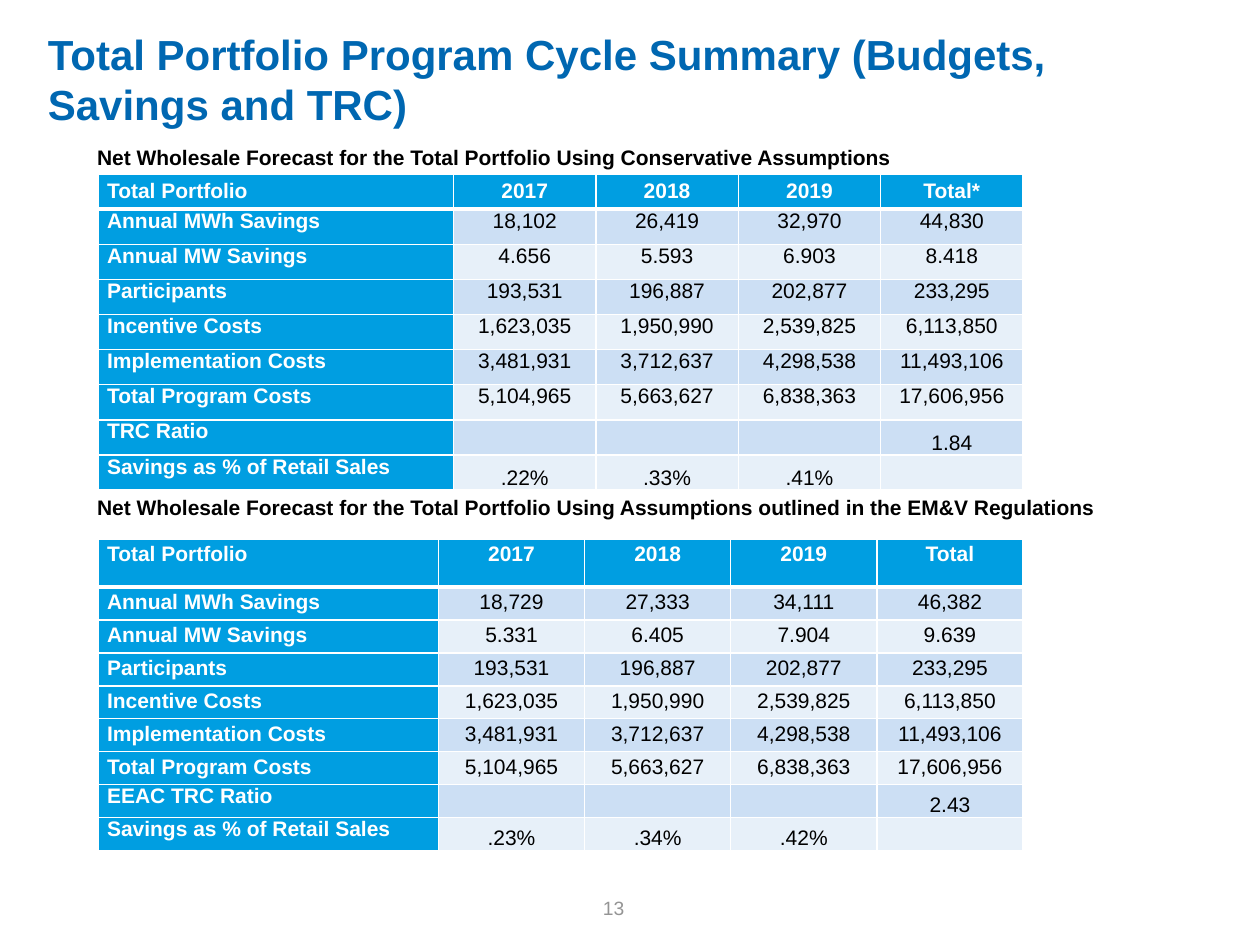
from dataclasses import dataclass
from lxml.etree import SubElement as Sub
from pptx import Presentation
from pptx.dml.color import RGBColor as Rgb
from pptx.enum.text import MSO_ANCHOR as Anchor, MSO_AUTO_SIZE as Fit, PP_ALIGN as Align
from pptx.oxml.ns import qn
from pptx.util import Inches, Pt


@dataclass(frozen=True)
class Theme:
    font: str = "Arial"
    head: str = "0067B1"
    fill: str = "009EE1"
    odd: str = "CCDFF4"
    even: str = "E7F0F9"
    white: str = "FFFFFF"
    black: str = "000000"
    gray: str = "949494"
    big: int = 24
    text: int = 12
    small: int = 11


class Page:
    def __init__(self, deck, theme):
        self.theme = theme
        self.slide = deck.slides.add_slide(deck.slide_layouts[1])

    def style(self, para, size, color, bold=False, align=Align.LEFT):
        para.alignment = align
        for run in para.runs:
            font = run.font
            font.name, font.size, font.bold = self.theme.font, Pt(size), bold
            font.color.rgb = Rgb.from_string(color)

    def place(self, shape, box, anchor):
        shape.left, shape.top, shape.width, shape.height = map(Inches, box)
        frame = shape.text_frame
        frame.margin_left = frame.margin_right = 0
        frame.margin_top = frame.margin_bottom = 0
        frame.word_wrap, frame.auto_size = True, Fit.NONE
        frame.vertical_anchor = anchor
        return frame

    def title(self, text, box):
        frame = self.place(self.slide.shapes.title, box, Anchor.MIDDLE)
        frame.text = text
        self.style(frame.paragraphs[0], self.theme.big, self.theme.head, True)

    def body(self, lines, box, gap):
        frame = self.place(self.slide.placeholders[1], box, Anchor.TOP)
        frame.text = "\n".join(lines)
        for i, para in enumerate(frame.paragraphs):
            para.level = 1
            para.line_spacing = 0.9
            para.space_before = Pt(gap if i else 0)
            props = para._p.get_or_add_pPr()
            props.set("marL", str(Inches(0.39)))
            props.set("indent", "0")
            Sub(props, qn("a:buNone"))
            self.style(para, self.theme.text, self.theme.black, True)

    def number(self, text, box):
        shape = self.slide.shapes.add_textbox(*map(Inches, box))
        frame = self.place(shape, box, Anchor.MIDDLE)
        frame.text = text
        self.style(frame.paragraphs[0], self.theme.small, self.theme.gray, align=Align.CENTER)

    def border(self, cell, row):
        props = cell._tc.get_or_add_tcPr()
        wide = {0: "B", 1: "T"}.get(row)
        for side in "LRTB":
            line = Sub(props, qn(f"a:ln{side}"), w=str(Pt(3 if side == wide else 1)))
            Sub(Sub(line, qn("a:solidFill")), qn("a:srgbClr"), val=self.theme.white)

    def cell(self, cell, text, row, col, space, anchor):
        theme = self.theme
        label = row == 0 or col == 0
        self.border(cell, row)
        cell.fill.solid()
        cell.fill.fore_color.rgb = Rgb.from_string(
            theme.fill if label else theme.odd if row % 2 else theme.even)
        cell.margin_left = cell.margin_right = Inches(0.07)
        cell.margin_top = cell.margin_bottom = 0
        cell.vertical_anchor = anchor
        para = cell.text_frame.paragraphs[0]
        if text:
            para.text = text
            para.line_spacing = space
        else:
            Sub(para._p, qn("a:endParaRPr"), sz=str(theme.text * 100))
        self.style(para, theme.text, theme.white if label else theme.black, label,
                   Align.CENTER if col else Align.LEFT)

    def table(self, rows, box, first, top, space, anchor):
        count, width = len(rows), len(rows[0])
        grid = self.slide.shapes.add_table(count, width, *map(Inches, box)).table
        for i, col in enumerate(grid.columns):
            col.width = Inches((box[2] - first) / (width - 1) if i else first)
        for i, row in enumerate(grid.rows):
            row.height = Inches((box[3] - top) / (count - 1) if i else top)
            last = i >= count - 2
            for j, text in enumerate(rows[i]):
                place = anchor if i == 0 else Anchor.BOTTOM if last and j else Anchor.TOP
                self.cell(grid.cell(i, j), text, i, j, 1 if last else space, place)


COSTS = [
    ["Participants", "193,531", "196,887", "202,877", "233,295"],
    ["Incentive Costs", "1,623,035", "1,950,990", "2,539,825", "6,113,850"],
    ["Implementation Costs", "3,481,931", "3,712,637", "4,298,538", "11,493,106"],
    ["Total Program Costs", "5,104,965", "5,663,627", "6,838,363", "17,606,956"],
]


def rows(total, energy, power, ratio, value, share):
    return [
        ["Total Portfolio", "2017", "2018", "2019", total],
        ["Annual MWh Savings", *energy],
        ["Annual MW Savings", *power],
        *COSTS,
        [ratio, "", "", "", value],
        ["Savings as % of Retail Sales", *share, ""],
    ]


def main():
    deck = Presentation()
    deck.slide_width, deck.slide_height = Inches(10), Inches(7.5)
    page = Page(deck, Theme())
    page.number("13", (4.68, 7.11, 0.38, 0.19))
    page.title("Total Portfolio Program Cycle Summary (Budgets, Savings and TRC)",
               (0.38, 0, 9, 1.25))
    page.body(["Net Wholesale Forecast for the Total Portfolio Using Conservative Assumptions",
               "Net Wholesale Forecast for the Total Portfolio Using Assumptions "
               "outlined in the EM&V Regulations"],
              (0.38, 1.17, 9.27, 5.55), 187)
    page.table(rows("Total*", ["18,102", "26,419", "32,970", "44,830"],
                    ["4.656", "5.593", "6.903", "8.418"],
                    "TRC Ratio", "1.84", [".22%", ".33%", ".41%"]),
               (0.78, 1.38, 7.34, 2.51), 2.82, 0.28, 1, Anchor.MIDDLE)
    page.table(rows("Total", ["18,729", "27,333", "34,111", "46,382"],
                    ["5.331", "6.405", "7.904", "9.639"],
                    "EEAC TRC Ratio", "2.43", [".23%", ".34%", ".42%"]),
               (0.78, 4.28, 7.34, 2.47), 2.7, 0.38, 1.15, Anchor.TOP)
    deck.save("out.pptx")


if __name__ == "__main__":
    main()
